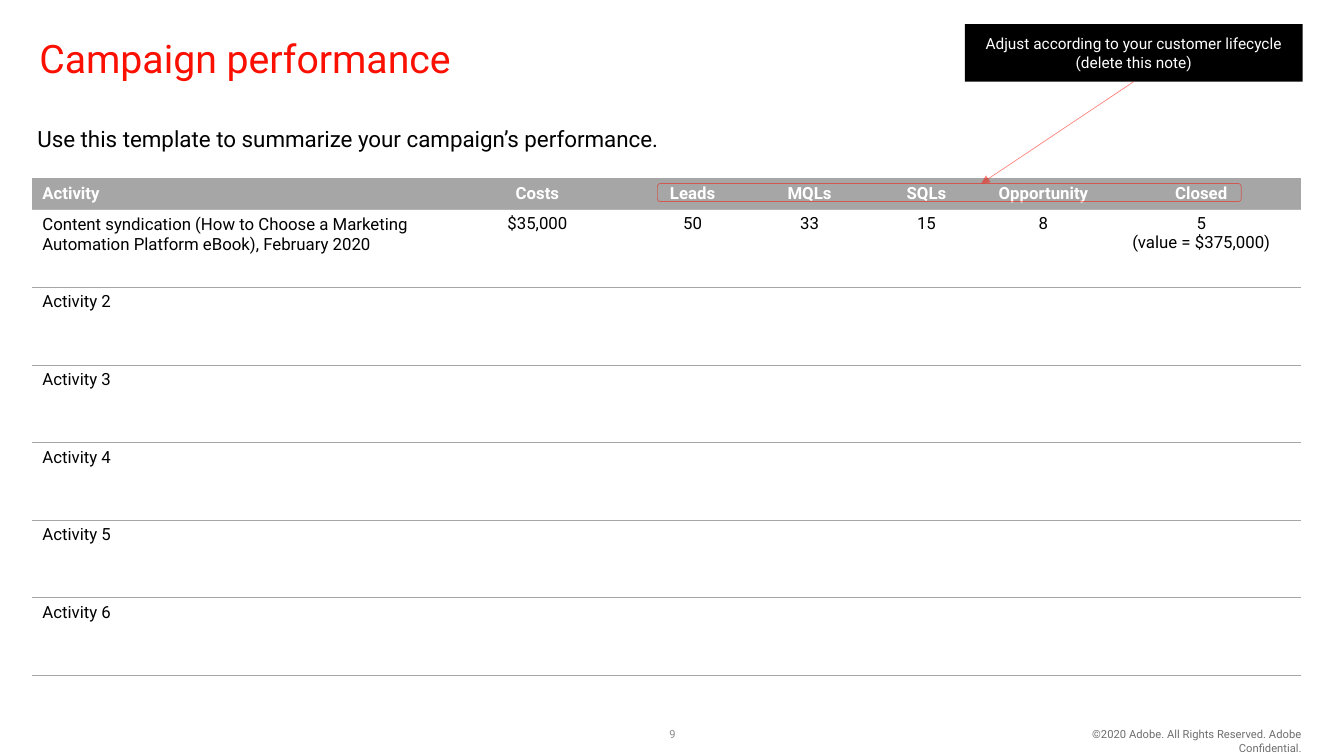
from lxml.etree import SubElement
from pptx import Presentation
from pptx.dml.color import RGBColor
from pptx.enum.shapes import MSO_CONNECTOR, MSO_SHAPE
from pptx.enum.text import MSO_ANCHOR, MSO_AUTO_SIZE, PP_ALIGN
from pptx.oxml.ns import qn
from pptx.util import Inches, Pt

FONT = "Roboto"
COLORS = {
    "red": "FA0F00",
    "black": "000000",
    "white": "FFFFFF",
    "header": "A6A6A6",
    "header_rule": "B3B3B3",
    "copyright": "6E6E6E",
    "page_number": "8C8C8C",
}
COLUMN_WIDTHS = [4.05, 1.92, 1.16, 1.16, 1.16, 1.16, 1.97]
HEADER_HEIGHT, ROW_HEIGHT = 0.31, 0.77
ROWS = [
    ["Activity", "Costs", "Leads", "MQLs", "SQLs", "Opportunity", "Closed"],
    [
        "Content syndication (How to Choose a Marketing Automation Platform eBook), February 2020",
        "$35,000", "50", "33", "15", "8", "5\n(value = $375,000)",
    ],
] + [[f"Activity {number}"] + [""] * 6 for number in range(2, 7)]


def rgb(name):
    """Return the named colour."""
    return RGBColor.from_string(COLORS[name])


def write(paragraph, text, size, color, align=PP_ALIGN.LEFT, bold=False):
    """Fill a paragraph with formatted runs, breaking at newlines."""
    paragraph.alignment = align
    for index, line in enumerate(text.split("\n")):
        if index:
            paragraph.add_line_break()
        run = paragraph.add_run()
        run.text = line
        run.font.name = FONT
        run.font.size = Pt(size)
        run.font.bold = bold
        run.font.color.rgb = rgb(color)


def fill_placeholder(placeholder, box, text, size, color, line_spacing):
    """Place a template placeholder and give it one unbulleted paragraph."""
    placeholder.left, placeholder.top, placeholder.width, placeholder.height = map(Inches, box)
    frame = placeholder.text_frame
    frame.auto_size = MSO_AUTO_SIZE.NONE
    frame.word_wrap = True
    frame.vertical_anchor = MSO_ANCHOR.TOP
    frame.margin_left = frame.margin_right = Inches(0.05)
    frame.margin_top = frame.margin_bottom = Inches(0.05)
    paragraph = frame.paragraphs[0]
    properties = paragraph._p.get_or_add_pPr()
    properties.set("marL", "0")
    properties.set("indent", "0")
    SubElement(properties, qn("a:buNone"))
    paragraph.space_before = Pt(0)
    paragraph.line_spacing = line_spacing
    write(paragraph, text, size, color)


def add_footer_text(slide, box, text, color, align):
    """Add one small footer text."""
    frame = slide.shapes.add_textbox(*map(Inches, box)).text_frame
    frame.word_wrap = True
    write(frame.paragraphs[0], text, 8, color, align)


def set_borders(cell, top, bottom):
    """Draw the top and bottom rules of a cell and clear its sides."""
    properties = cell._tc.get_or_add_tcPr()
    for tag, rule in (("lnL", None), ("lnR", None), ("lnT", top), ("lnB", bottom)):
        border = SubElement(properties, qn(f"a:{tag}"))
        if rule is None:
            SubElement(border, qn("a:noFill"))
            continue
        color, width = rule
        border.set("w", str(Pt(width)))
        solid = SubElement(border, qn("a:solidFill"))
        SubElement(solid, qn("a:srgbClr"), val=COLORS[color])


def add_performance_table(slide, box):
    """Add the campaign table in the given box."""
    table = slide.shapes.add_table(len(ROWS), len(COLUMN_WIDTHS), *map(Inches, box)).table
    table.horz_banding = False
    for column, width in zip(table.columns, COLUMN_WIDTHS):
        column.width = Inches(width)
    thin, header_rule = ("header", 0.5), ("header_rule", 1)
    for row_index, texts in enumerate(ROWS):
        is_header = row_index == 0
        table.rows[row_index].height = Inches(HEADER_HEIGHT if is_header else ROW_HEIGHT)
        for column_index, text in enumerate(texts):
            cell = table.cell(row_index, column_index)
            set_borders(cell, header_rule if row_index == 1 else thin,
                        header_rule if is_header else thin)
            if is_header:
                cell.fill.solid()
                cell.fill.fore_color.rgb = rgb("header")
            else:
                cell.fill.background()
            cell.vertical_anchor = MSO_ANCHOR.MIDDLE if is_header else MSO_ANCHOR.TOP
            inset = 0.05 if is_header or column_index == 0 else 0.04
            cell.margin_top = cell.margin_bottom = Inches(inset)
            if text:
                write(cell.text_frame.paragraphs[0], text, 12,
                      "white" if is_header else "black",
                      PP_ALIGN.CENTER if column_index else PP_ALIGN.LEFT, is_header)


def style_red_line(line):
    """Make a line thin, red and half transparent."""
    line.width = Pt(0.5)
    line.color.rgb = rgb("red")
    color = line._get_or_add_ln().find(qn("a:solidFill")).find(qn("a:srgbClr"))
    SubElement(color, qn("a:alpha"), val="50000")


def add_lifecycle_note(slide, note_box, frame_box):
    """Add the black note, the frame round the stages and the arrow between them."""
    note = slide.shapes.add_shape(MSO_SHAPE.RECTANGLE, *map(Inches, note_box))
    note.shadow.inherit = False
    note.fill.solid()
    note.fill.fore_color.rgb = rgb("black")
    note.line.fill.background()
    frame = note.text_frame
    frame.word_wrap = True
    frame.vertical_anchor = MSO_ANCHOR.MIDDLE
    write(frame.paragraphs[0], "Adjust according to your customer lifecycle", 11, "white",
          PP_ALIGN.CENTER)
    write(frame.add_paragraph(), "(delete this note)", 11, "white", PP_ALIGN.CENTER)

    stages = slide.shapes.add_shape(MSO_SHAPE.ROUNDED_RECTANGLE, *map(Inches, frame_box))
    stages.shadow.inherit = False
    stages.fill.background()
    style_red_line(stages.line)

    left, top, width, height = note_box
    stages_left, stages_top, stages_width, _ = frame_box
    arrow = slide.shapes.add_connector(
        MSO_CONNECTOR.STRAIGHT, Inches(left + width / 2), Inches(top + height),
        Inches(stages_left + stages_width * 0.555), Inches(stages_top))
    style_red_line(arrow.line)
    SubElement(arrow.line._get_or_add_ln(), qn("a:tailEnd"), type="triangle")
    SubElement(arrow._element.spPr, qn("a:effectLst"))


def build_campaign_slide(presentation):
    """Build the campaign performance slide."""
    slide = presentation.slides.add_slide(presentation.slide_layouts[1])
    fill_placeholder(slide.shapes.title, (0.34, 0.34, 12.57, 0.71),
                     "Campaign performance", 28, "red", 0.9)
    fill_placeholder(slide.placeholders[1], (0.32, 1.19, 7.71, 0.64),
                     "Use this template to summarize your campaign’s performance.",
                     16, "black", 1.0)
    add_footer_text(slide, (10.17, 7.17, 2.84, 0.3),
                    "©2020 Adobe. All Rights Reserved. Adobe Confidential.",
                    "copyright", PP_ALIGN.RIGHT)
    add_footer_text(slide, (6.45, 7.17, 0.44, 0.29), "9", "page_number", PP_ALIGN.CENTER)
    add_performance_table(slide, (0.32, 1.77, 12.59, 4.93))
    add_lifecycle_note(slide, (9.57, 0.24, 3.35, 0.57), (6.52, 1.82, 5.79, 0.18))


def main():
    """Create and save the presentation."""
    presentation = Presentation()
    presentation.slide_width = Inches(13.33)
    presentation.slide_height = Inches(7.5)
    build_campaign_slide(presentation)
    presentation.save("out.pptx")


if __name__ == "__main__":
    main()
